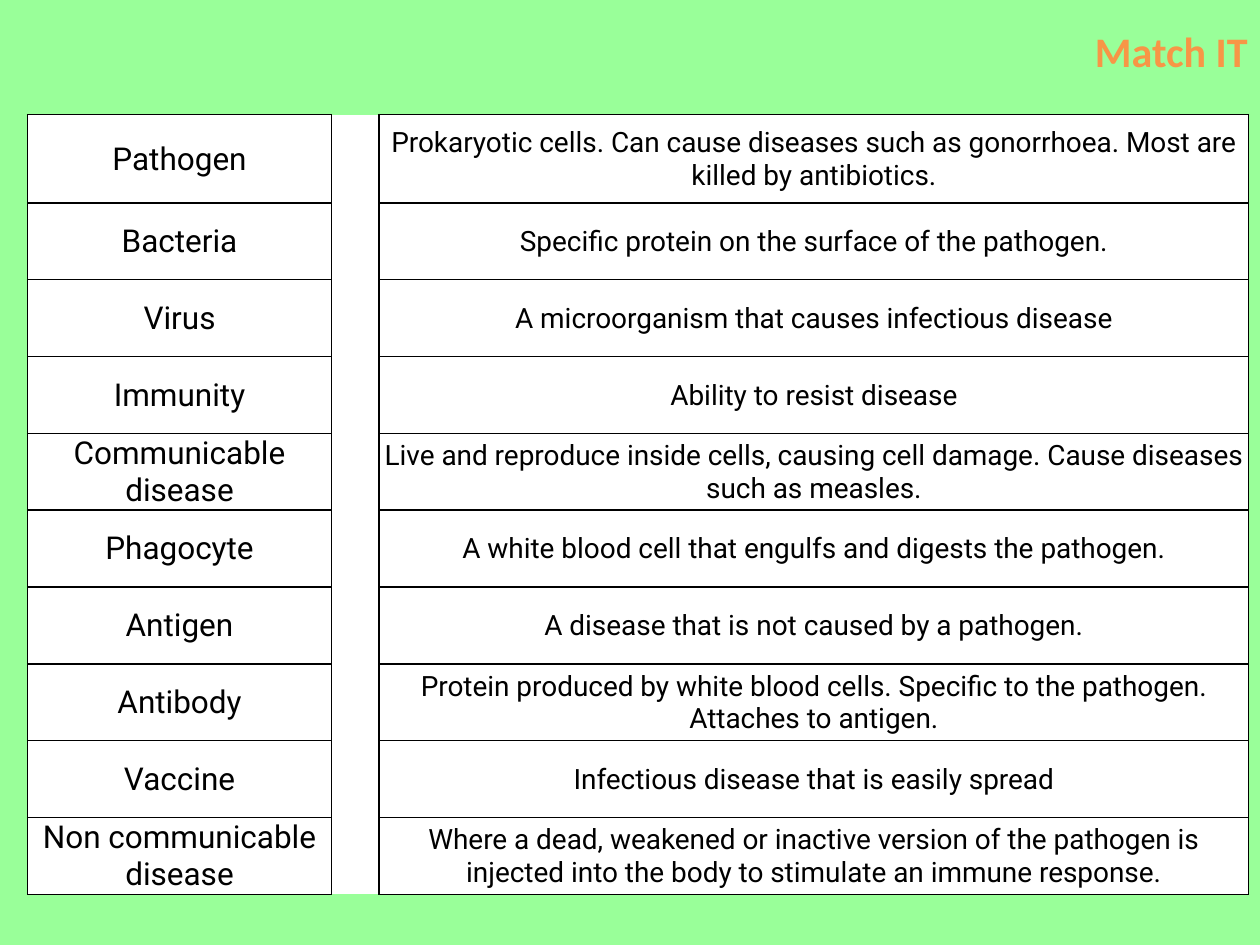
from lxml import etree
from pptx import Presentation
from pptx.dml.color import RGBColor
from pptx.enum import text
from pptx.oxml.ns import qn
from pptx.util import Inches, Pt

GREEN = RGBColor(0x99, 0xFF, 0x99)
ORANGE = RGBColor(0xF7, 0x96, 0x46)
WHITE = RGBColor(0xFF, 0xFF, 0xFF)
BLACK = RGBColor(0, 0, 0)

TITLE = "Match IT"
ROWS = [
    ("Pathogen", "Prokaryotic cells. Can cause diseases such as gonorrhoea. Most are killed by antibiotics."),
    ("Bacteria", "Specific protein on the surface of the pathogen."),
    ("Virus", "A microorganism that causes infectious disease"),
    ("Immunity", "Ability to resist disease"),
    ("Communicable disease", "Live and reproduce inside cells, causing cell damage. Cause diseases such as measles."),
    ("Phagocyte", "A white blood cell that engulfs and digests the pathogen."),
    ("Antigen", "A disease that is not caused by a pathogen."),
    ("Antibody", "Protein produced by white blood cells. Specific to the pathogen. Attaches to antigen."),
    ("Vaccine", "Infectious disease that is easily spread"),
    ("Non communicable disease", "Where a dead, weakened or inactive version of the pathogen is injected "
                                 "into the body to stimulate an immune response."),
]
COL_WIDTHS = (2.41, 0.38, 6.9)
FIRST_ROW, ROW = 0.7, 0.61
LEFT, TOP = 0.22, 0.91
TERM, GAP, MEANING = range(3)
SIZES = {TERM: 18, MEANING: 16}


def add_borders(cell, sides):
    """Draw 1 pt black lines on the given sides; the other sides get none."""
    tcPr = cell._tc.get_or_add_tcPr()
    for side in "LRTB":
        ln = etree.SubElement(tcPr, qn(f"a:ln{side}"), w=str(Pt(1)))
        if side in sides:
            fill = etree.SubElement(ln, qn("a:solidFill"))
            etree.SubElement(fill, qn("a:srgbClr"), val=str(BLACK))
        else:
            etree.SubElement(ln, qn("a:noFill"))


def write(tf, words, align, font, size, color, bold=False):
    tf.text = words
    p = tf.paragraphs[0]
    p.alignment = align
    f = p.runs[0].font
    f.name, f.size, f.bold = font, Pt(size), bold
    f.color.rgb = color


def add_matching_table(slide):
    height = FIRST_ROW + ROW * (len(ROWS) - 1)
    frame = slide.shapes.add_table(len(ROWS), len(COL_WIDTHS), Inches(LEFT), Inches(TOP),
                                   Inches(sum(COL_WIDTHS)), Inches(height))
    table = frame.table
    table.first_row = table.horz_banding = False
    for column, width in zip(table.columns, COL_WIDTHS):
        column.width = Inches(width)
    for i, words in enumerate(ROWS):
        table.rows[i].height = Inches(ROW if i else FIRST_ROW)
        for j in range(len(COL_WIDTHS)):
            cell = table.cell(i, j)
            add_borders(cell, "LR" if j == GAP else "LRTB")
            cell.fill.solid()
            cell.fill.fore_color.rgb = WHITE
            if j == GAP:
                continue
            cell.margin_left = cell.margin_right = cell.margin_top = Inches(0.01)
            cell.margin_bottom = 0
            cell.vertical_anchor = text.MSO_ANCHOR.MIDDLE
            write(cell.text_frame, words[j // MEANING], text.PP_ALIGN.CENTER,
                  "Roboto", SIZES[j], BLACK)
    table.cell(0, GAP).merge(table.cell(len(ROWS) - 1, GAP))


def add_title(slide):
    box = slide.shapes.add_textbox(Inches(1.77), Inches(0.04), Inches(8.23), Inches(0.72))
    tf = box.text_frame
    tf.word_wrap = True
    tf.vertical_anchor = text.MSO_ANCHOR.MIDDLE
    write(tf, TITLE, text.PP_ALIGN.RIGHT, "Calibri", 24, ORANGE, bold=True)


def main():
    prs = Presentation()
    prs.slide_width, prs.slide_height = Inches(10), Inches(7.5)
    slide = prs.slides.add_slide(prs.slide_layouts[6])
    slide.background.fill.solid()
    slide.background.fill.fore_color.rgb = GREEN
    add_matching_table(slide)
    add_title(slide)
    prs.save("out.pptx")


if __name__ == "__main__":
    main()
